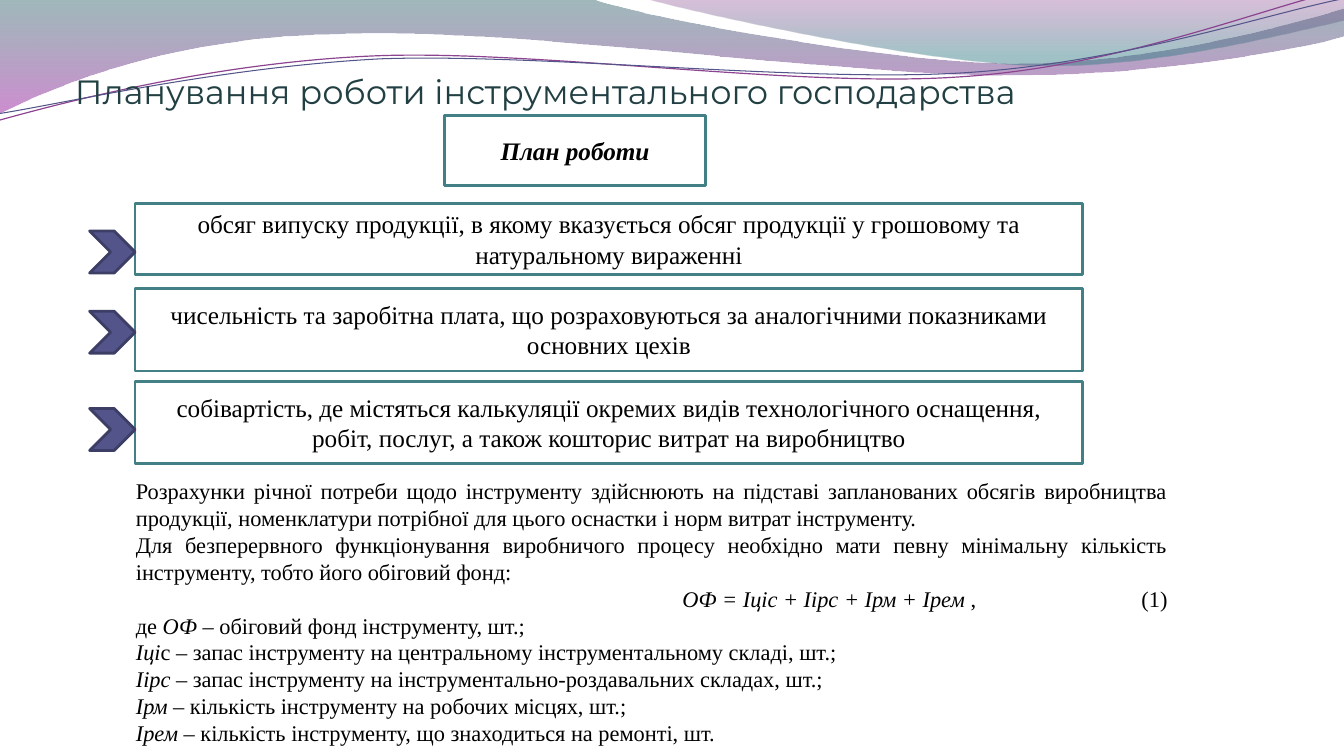
from pptx import Presentation
from pptx.util import Pt
from pptx.dml.color import RGBColor as RGB
from pptx.enum.shapes import MSO_SHAPE as Kind
from pptx.enum.text import MSO_ANCHOR as Anchor, MSO_AUTO_SIZE as Fit, PP_ALIGN as Align
from pptx.oxml.ns import qn
from lxml.etree import SubElement as Sub

HUE = {
    "white": "FFFFFF", "black": "000000", "teal": "438086", "title": "224043",
    "indigo": "53548A", "edge": "3D3E66", "plum": "8D4490",
    "pine": "2D6368", "orchid": "A530A9", "grape": "7F2F82", "sea": "2F7B82",
}
SERIF = "Times New Roman"

WAVES = [
    ((0, 0), [(422.6, -0.7), (456.5, 12.2, 637.2, 45.4, 727.9, 45.4),
              (820.1, 45.4, 920.2, 18.7, 959.8, 6.5), (961.2, 25.9),
              (944, 31.7, 835.2, 54.7, 715.7, 54), (596.9, 54, 366.5, 20.2, 247, 24.5),
              (123.8, 25.9, 43.9, 59.8, -0.7, 81.4), (0, 0)],
     [(0, "pine", 45), (1, "orchid", 55)]),
    ((460.1, -0.7), [(488.9, 7.9, 654.5, 44.6, 738, 46.8),
                     (821.5, 49.7, 923, 23, 959.8, 15.1), (959.8, 0), (460.1, -0.7)],
     [(0, "grape", 30), (0.8, "sea", 45)]),
]
CURVES = [
    ((-2.6, 63.4), [(45, 52.6, 152.1, 29.6, 266.3, 30), (379.4, 30.3, 567.9, 67.2, 683.2, 64.7),
                    (798.4, 63.1, 902.3, 25.9, 959.8, 15.6)], "plum", 0.85),
    ((-1.3, 58.4), [(43.9, 53.5, 157, 32.8, 272.2, 32.2), (387.3, 33.6, 572.1, 63.4, 687.4, 61.8),
                    (802.6, 60.2, 905, 30, 961.5, 21.6)], "indigo", 0.75),
]
ITEMS = [
    (0, 50.5, 19.5, "обсяг випуску продукції, в якому вказується обсяг продукції у грошовому та натуральному вираженні"),
    (60.5, 59, 16.3, "чисельність та заробітна плата, що розраховуються за аналогічними показниками основних цехів"),
    (126.8, 59, 19.5, "собівартість, де містяться калькуляції окремих видів технологічного оснащення, робіт, послуг, а також кошторис витрат на виробництво"),
]
NOTES = [
    [("Розрахунки річної потреби щодо інструменту здійснюють на підставі запланованих обсягів виробництва продукції, номенклатури потрібної для цього оснастки і норм витрат інструменту. ", False)],
    [("Для безперервного функціонування виробничого процесу необхідно мати певну мінімальну кількість інструменту, тобто його обіговий фонд:", False)],
    [("ОФ = Іціс + Іірс + Ірм + Ірем ", True), (",\t\t\t\t (1)", False)],
    [("де ", False), ("ОФ ", True), ("– обіговий фонд інструменту, шт.;", False)],
    [("Іці", True), ("с – запас інструменту на центральному інструментальному складі, шт.;", False)],
    [("Іірс ", True), ("– запас інструменту на інструментально-роздавальних складах, шт.;", False)],
    [("Ірм ", True), ("– кількість інструменту на робочих місцях, шт.;", False)],
    [("Ірем ", True), ("– кількість інструменту, що знаходиться на ремонті, шт.", False)],
]
FORMULA = 2


def color(name):
    return RGB.from_string(HUE[name])


def write(para, text, size=18, font=SERIF, hue="black", bold=False, slant=False, align=Align.CENTER):
    para.alignment = align
    run = para.add_run()
    run.text = text
    face = run.font
    face.size, face.name, face.bold, face.italic = Pt(size), font, bold, slant
    face.color.rgb = color(hue)


def trace(slide, start, parts, close):
    spots = [(Pt(x), Pt(y)) for part in parts for x, y in zip(part[::2], part[1::2])]
    pen = slide.shapes.build_freeform(Pt(start[0]), Pt(start[1]), scale=1.0)
    pen.add_line_segments(spots, close=close)
    shape = pen.convert_to_shape()
    shape.shadow.inherit = False
    lines = iter(list(shape.element.iter(qn("a:lnTo"))))
    for part in parts:
        line = next(lines)
        if len(part) == 6:
            line.tag = qn("a:cubicBezTo")
            for extra in (next(lines), next(lines)):
                line.append(extra[0])
                extra.getparent().remove(extra)
    return shape


def draw_waves(slide):
    for start, parts, stops in WAVES:
        wave = trace(slide, start, parts, True)
        wave.line.fill.background()
        wave.fill.gradient()
        wave.fill.gradient_angle = 270
        for stop, (place, hue, alpha) in zip(wave.fill.gradient_stops, stops):
            stop.position = place
            stop.color.rgb = color(hue)
        for node, (place, hue, alpha) in zip(wave.element.iter(qn("a:gs")), stops):
            Sub(node[0], qn("a:alpha")).set("val", str(alpha * 1000))
    for start, parts, hue, width in CURVES:
        curve = trace(slide, start, parts, False)
        curve.rotation = 357.3
        curve.fill.background()
        curve.line.color.rgb = color(hue)
        curve.line.width = Pt(width)


def add_form(slide, kind, box, fill, line):
    shape = slide.shapes.add_shape(kind, *map(Pt, box))
    shape.shadow.inherit = False
    shape.fill.solid()
    shape.fill.fore_color.rgb = color(fill)
    shape.line.color.rgb = color(line)
    shape.line.width = Pt(2)
    return shape


def add_card(slide, box, text, **style):
    frame = add_form(slide, Kind.RECTANGLE, box, "white", "teal").text_frame
    frame.word_wrap = True
    frame.vertical_anchor = Anchor.MIDDLE
    write(frame.paragraphs[0], text, **style)


def draw_list(slide, left, top, width):
    mark, tall = 32.5, 30
    for down, height, drop, text in ITEMS:
        add_card(slide, (left + mark, top + down, width - mark, height), text)
    for down, height, drop, text in ITEMS:
        add_form(slide, Kind.CHEVRON, (left, top + down + drop, mark, tall), "indigo", "edge")


def draw_title(slide, *box):
    frame = slide.shapes.add_textbox(*map(Pt, box)).text_frame
    frame.word_wrap = True
    frame.vertical_anchor = Anchor.BOTTOM
    frame.margin_left = frame.margin_right = frame.margin_bottom = 0
    write(frame.paragraphs[0], "Планування роботи інструментального господарства",
          size=24, font="Montserrat", hue="title", align=Align.LEFT)


def draw_notes(slide, *box):
    frame = slide.shapes.add_textbox(*map(Pt, box)).text_frame
    frame.word_wrap = True
    frame.auto_size = Fit.SHAPE_TO_FIT_TEXT
    for row, runs in enumerate(NOTES):
        para = frame.add_paragraph() if row else frame.paragraphs[0]
        align = Align.RIGHT if row == FORMULA else Align.JUSTIFY
        for text, slant in runs:
            write(para, text, size=16, slant=slant, align=align)


def main():
    deck = Presentation()
    deck.slide_width, deck.slide_height = Pt(960), Pt(540)
    slide = deck.slides.add_slide(deck.slide_layouts[6])
    draw_waves(slide)
    add_card(slide, (317.5, 82.3, 186.5, 50.3), "План роботи", bold=True, slant=True)
    draw_list(slide, 64, 145.5, 709.5)
    draw_title(slide, 53.5, 29, 697, 50.5)
    draw_notes(slide, 90, 337.4, 751, 206)
    deck.save("out.pptx")


if __name__ == "__main__":
    main()
